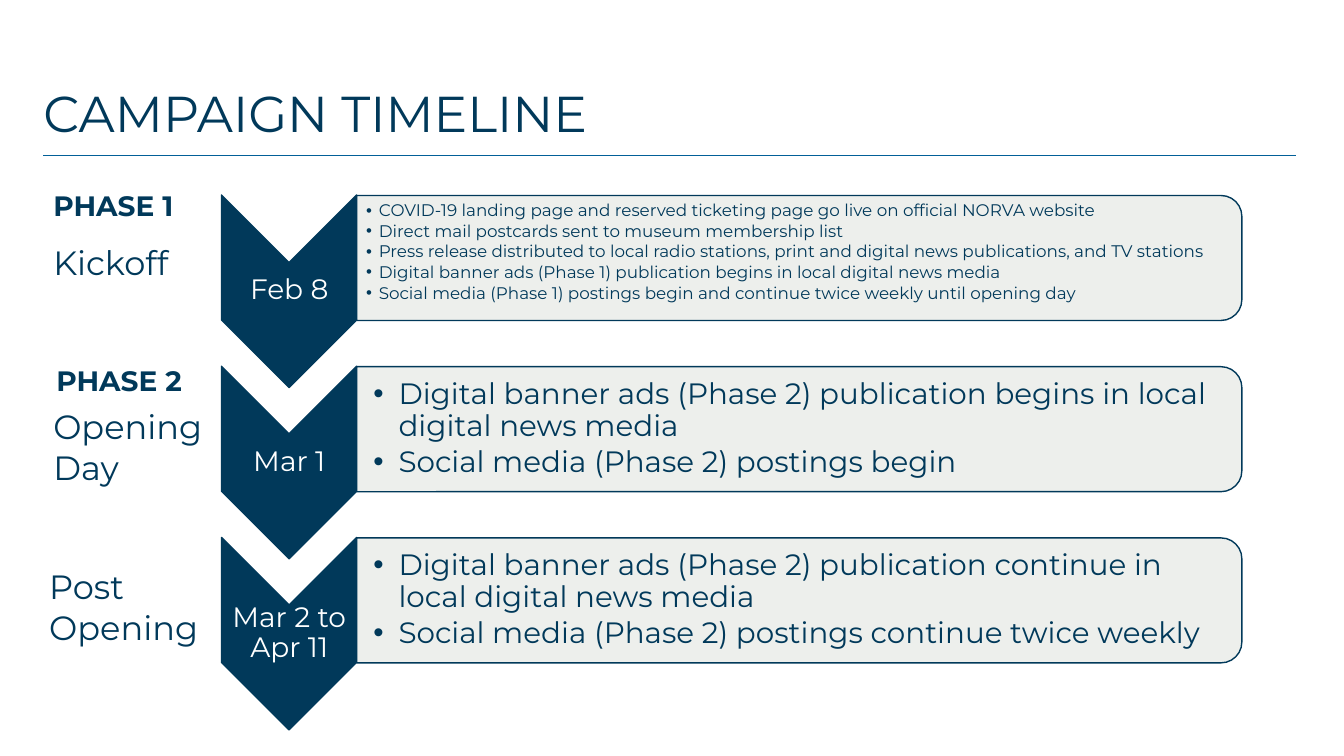
from pptx import Presentation
from pptx.dml.color import RGBColor
from pptx.enum.shapes import MSO_CONNECTOR, MSO_SHAPE
from pptx.enum.text import MSO_ANCHOR, MSO_AUTO_SIZE, PP_ALIGN
from pptx.oxml.ns import qn
from pptx.util import Pt
from lxml import etree

LEFT, CENTER = PP_ALIGN.LEFT, PP_ALIGN.CENTER
TOP, MIDDLE, BOTTOM = MSO_ANCHOR.TOP, MSO_ANCHOR.MIDDLE, MSO_ANCHOR.BOTTOM
FIXED, GROW = MSO_AUTO_SIZE.NONE, MSO_AUTO_SIZE.SHAPE_TO_FIT_TEXT
CHEVRON, BAR = MSO_SHAPE.CHEVRON, MSO_SHAPE.ROUND_2_SAME_RECTANGLE
STRAIGHT = MSO_CONNECTOR.STRAIGHT

NAVY, BLUE, GRAY, WHITE = "01395A", "026098", "ECEEEB", "FFFFFF"
STEP = 122.3

# date, list size, left inset, hanging indent, anchor, list items
ROWS = [
    ("Feb 8", 12, 6.7, 9, TOP, [
        "COVID-19 landing page and reserved ticketing page go live on official NORVA website",
        "Direct mail postcards sent to museum membership list",
        "Press release distributed to local radio stations, print and digital news publications, and TV stations",
        "Digital banner ads (Phase 1) publication begins in local digital news media",
        "Social media (Phase 1) postings begin and continue twice weekly until opening day",
    ]),
    ("Mar 1", 21, 11.8, 18, MIDDLE, [
        "Digital banner ads (Phase 2) publication begins in local digital news media",
        "Social media (Phase 2) postings begin",
    ]),
    ("Mar 2 to Apr 11", 21, 11.8, 18, MIDDLE, [
        "Digital banner ads (Phase 2) publication continue in local digital news media",
        "Social media (Phase 2) postings continue twice weekly",
    ]),
]

# left, top, width, height, lines
STAGES = [
    (31, 169.2, 98, 36, ["Kickoff"]),
    (31, 286.6, 124.6, 65.5, ["Opening", "Day"]),
    (28.1, 401, 124.6, 65.5, ["Post", "Opening"]),
]
PHASES = [(31, 131, "PHASE 1"), (33.1, 256.3, "PHASE 2")]


def color(code):
    return RGBColor.from_string(code)


class Deck:
    font = "Montserrat"

    def __init__(self, slide):
        self.slide = slide
        self.shapes = slide.shapes

    def place(self, shape, box):
        shape.left, shape.top, shape.width, shape.height = map(Pt, box)

    def style(self, shape, lines, size, code=NAVY, bold=False, align=LEFT,
              anchor=TOP, inset=(7.2, 3.6, 7.2, 3.6), wrap=True, fit=FIXED,
              space=1.0, after=0):
        """Set the lines of a shape, one paragraph each, with their format."""
        frame = shape.text_frame
        frame.word_wrap, frame.auto_size = wrap, fit
        frame.vertical_anchor = anchor
        (frame.margin_left, frame.margin_top,
         frame.margin_right, frame.margin_bottom) = map(Pt, inset)
        for i, line in enumerate(lines):
            para = frame.add_paragraph() if i else frame.paragraphs[0]
            para.alignment, para.line_spacing = align, space
            para.space_before, para.space_after = Pt(0), Pt(after)
            run = para.add_run()
            run.text = line
            run.font.name, run.font.size = self.font, Pt(size)
            run.font.bold = bold
            run.font.color.rgb = color(code)

    def title(self, text, box):
        shape = self.shapes.title
        self.place(shape, box)
        self.style(shape, [text], 36, anchor=BOTTOM,
                   inset=(0, 3.6, 0, 3.6), space=0.9)

    def text(self, box, lines, size, **look):
        shape = self.shapes.add_textbox(*map(Pt, box))
        self.style(shape, lines, size, **look)

    def list(self, holder, box, lines, size, left, hang, anchor):
        """Fill a body placeholder with bullets and bring it to the front."""
        self.place(holder, box)
        self.style(holder, lines, size, anchor=anchor,
                   inset=(left, 0.7, 0.7, 0.7), space=0.9, after=size * 0.15)
        for para in holder.text_frame.paragraphs:
            props = para._p.get_or_add_pPr()
            props.set("marL", str(Pt(hang)))
            props.set("indent", str(-Pt(hang)))
            etree.SubElement(props, qn("a:buFont")).set("typeface", "Arial")
            etree.SubElement(props, qn("a:buChar")).set("char", "•")
        holder._element.getparent().append(holder._element)

    def shape(self, kind, box, fill, alpha=None):
        """Add a preset shape turned a quarter to the right."""
        shape = self.shapes.add_shape(kind, *map(Pt, box))
        shape.rotation = 90
        shape.shadow.inherit = False
        shape.fill.solid()
        shape.fill.fore_color.rgb = color(fill)
        shape.line.color.rgb = color(NAVY)
        shape.line.width = Pt(1)
        if alpha:
            tint = shape._element.spPr.find(qn("a:solidFill"))[0]
            etree.SubElement(tint, qn("a:alpha")).set("val", str(alpha * 1000))

    def rule(self, left, right, y):
        line = self.shapes.add_connector(STRAIGHT, Pt(left), Pt(y), Pt(right), Pt(y))
        line.line.color.rgb = color(BLUE)
        line.line.width = Pt(1)
        etree.SubElement(line._element.spPr, qn("a:effectLst"))


def main():
    prs = Presentation()
    prs.slide_width, prs.slide_height = Pt(960), Pt(540)
    deck = Deck(prs.slides.add_slide(prs.slide_layouts.get_by_name("Comparison")))
    bodies = [p for p in deck.slide.placeholders if p.placeholder_format.idx in (1, 2, 3, 4)]
    spare = bodies.pop()._element
    spare.getparent().remove(spare)

    deck.rule(31, 926, 110.9)
    deck.title("CAMPAIGN TIMELINE", (31, 26.6, 895, 79.2))
    for i, (date, size, left, hang, anchor, items) in enumerate(ROWS):
        y = i * STEP
        deck.shape(CHEVRON, (137.7, 159.8 + y, 137.5, 96.5), NAVY)
        deck.text((158.4, 187.2 + y, 96.5, 41), [date], 20, code=WHITE,
                  align=CENTER, anchor=MIDDLE, inset=(0.7,) * 4, space=0.9, after=7)
        deck.shape(BAR, (526.3, -131.8 + y, 89.3, 632.2), GRAY, alpha=90)
        deck.list(bodies[i], (254.9, 143.7 + y, 627.8, 80.6), items,
                  size, left, hang, anchor)
    for *box, lines in STAGES:
        deck.text(box, lines, 24, wrap=False, fit=GROW)
    for x, y, name in PHASES:
        deck.text((x, y, 104.4, 31.5), [name], 20, bold=True, fit=GROW)
    prs.save("out.pptx")


if __name__ == "__main__":
    main()
